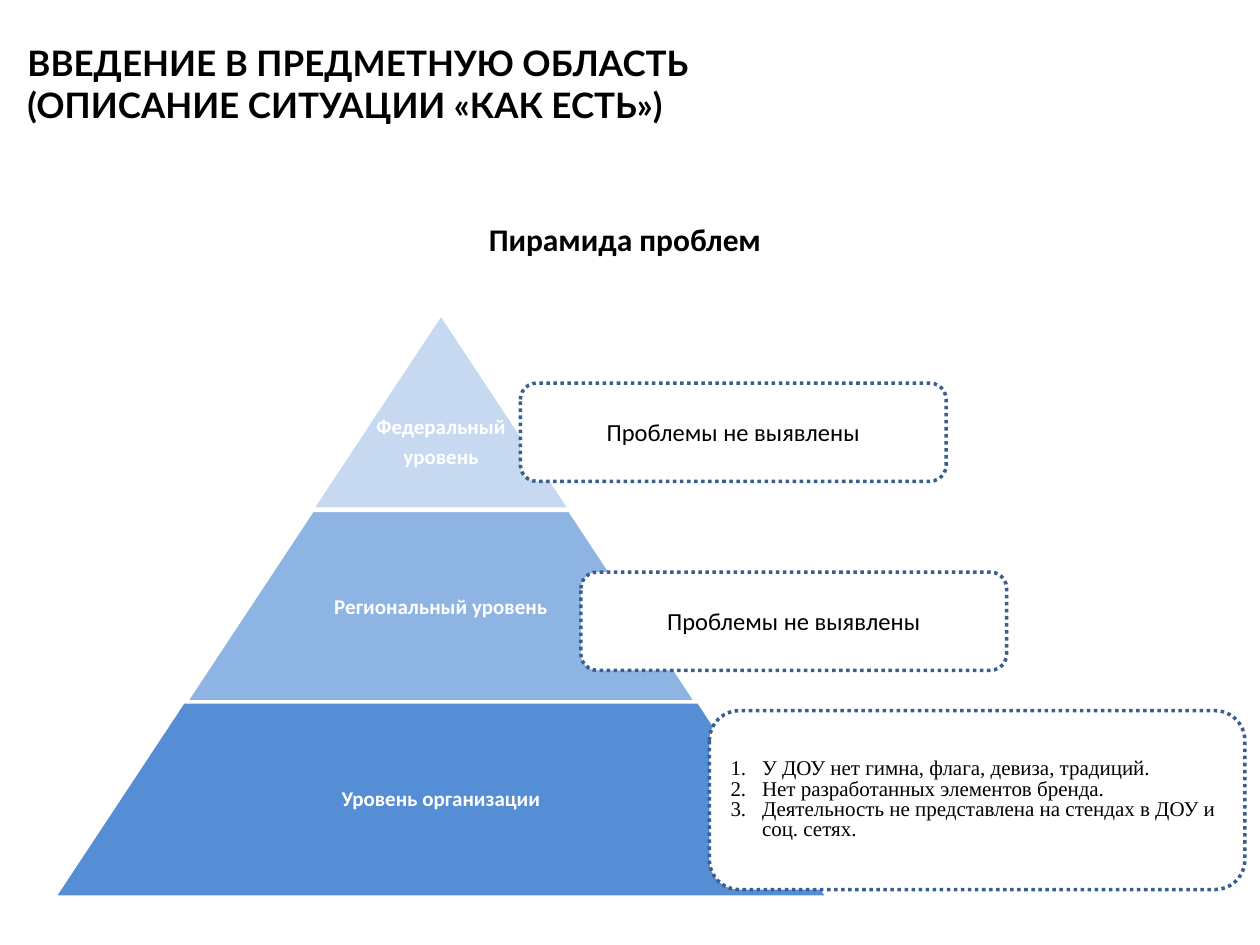
from dataclasses import dataclass

from lxml import etree
from pptx import Presentation
from pptx import util as u
from pptx.dml.color import RGBColor
from pptx.enum import dml, shapes, text
from pptx.oxml.ns import qn

BLACK = RGBColor(0x00, 0x00, 0x00)
WHITE = RGBColor(0xFF, 0xFF, 0xFF)
OUTLINE = RGBColor(0x3A, 0x5F, 0x8C)
PALE_BLUE = RGBColor(0xC6, 0xD9, 0xF1)
LIGHT_BLUE = RGBColor(0x8E, 0xB4, 0xE3)
MID_BLUE = RGBColor(0x55, 0x8E, 0xD5)

TIER_HEIGHT = 1.55
TIER_SLANT = 0.661
PYRAMID_AXIS = 3.5

CENTER = {"alignment": text.PP_ALIGN.CENTER}
TIER_PARAGRAPH = {**CENTER, "line_spacing": 0.9, "space_after": u.Pt(4.2)}
TIER_FONT = {"name": "Calibri", "size": u.Pt(12), "bold": True}
CALLOUT_FONT = {"name": "Calibri", "size": u.Pt(14)}
LIST_FONT = {"name": "Times New Roman", "size": u.Pt(12)}


@dataclass
class Tier:
    lines: list[str]
    top: float
    width: float
    label_width: float
    color: RGBColor
    label_inset: float = 0.02


@dataclass
class Callout:
    lines: list[str]
    left: float
    top: float
    width: float = 3.38
    height: float = 0.78
    numbered: bool = False


TIERS = [
    Tier(["Федеральный", "уровень"], 2.49, 2.05, 2.05, PALE_BLUE, label_inset=0.51),
    Tier(["Региональный уровень"], 4.05, 4.09, 2.66, LIGHT_BLUE),
    Tier(["Уровень организации"], 5.57, 6.14, 3.99, MID_BLUE),
]
CALLOUTS = [
    Callout(
        [
            "У ДОУ нет гимна, флага, девиза, традиций.",
            "Нет разработанных элементов бренда.",
            "Деятельность не представлена на стендах в ДОУ и соц. сетях.",
        ],
        5.63, 5.64, 4.25, 1.42, numbered=True,
    ),
    Callout(["Проблемы не выявлены"], 4.13, 3.04),
    Callout(["Проблемы не выявлены"], 4.61, 4.54),
]


def apply(target, values: dict) -> None:
    for name, value in values.items():
        setattr(target, name, value)


def number(paragraph) -> None:
    """Give the paragraph a hanging indent and an automatic number."""
    properties = paragraph._p.get_or_add_pPr()
    properties.set("marL", str(u.Inches(0.25)))
    properties.set("indent", str(-u.Inches(0.25)))
    etree.SubElement(properties, qn("a:buAutoNum"), type="arabicPeriod")


def write(frame, lines: list[str], paragraph_format: dict, font: dict,
          color: RGBColor = BLACK, numbered: bool = False) -> None:
    frame.word_wrap = True
    for index, line in enumerate(lines):
        paragraph = frame.paragraphs[0] if index == 0 else frame.add_paragraph()
        apply(paragraph, paragraph_format)
        if numbered:
            number(paragraph)
        run = paragraph.add_run()
        run.text = line
        apply(run.font, font)
        run.font.color.rgb = color


def add_text_frame(slide, left: float, top: float, width: float, height: float, **frame_format):
    box = slide.shapes.add_textbox(*map(u.Inches, (left, top, width, height)))
    apply(box.text_frame, frame_format)
    return box.text_frame


def add_outlined(slide, kind, left: float, top: float, width: float, height: float,
                 fill: RGBColor, line: RGBColor):
    shape = slide.shapes.add_shape(kind, *map(u.Inches, (left, top, width, height)))
    shape.shadow.inherit = False
    shape.fill.solid()
    shape.fill.fore_color.rgb = fill
    shape.line.color.rgb = line
    shape.line.width = u.Pt(2)
    return shape


def draw_tier(slide, tier: Tier) -> None:
    trapezoid = add_outlined(
        slide, shapes.MSO_SHAPE.TRAPEZOID, PYRAMID_AXIS - tier.width / 2, tier.top,
        tier.width, TIER_HEIGHT, tier.color, WHITE)
    trapezoid.adjustments[0] = TIER_SLANT
    margin = u.Inches(0.02)
    label = add_text_frame(
        slide, PYRAMID_AXIS - tier.label_width / 2, tier.top, tier.label_width, TIER_HEIGHT,
        vertical_anchor=text.MSO_ANCHOR.MIDDLE, margin_left=margin, margin_right=margin,
        margin_bottom=margin, margin_top=u.Inches(tier.label_inset))
    write(label, tier.lines, TIER_PARAGRAPH, TIER_FONT, WHITE)


def draw_callout(slide, callout: Callout) -> None:
    box = add_outlined(
        slide, shapes.MSO_SHAPE.ROUNDED_RECTANGLE, callout.left, callout.top,
        callout.width, callout.height, WHITE, OUTLINE)
    box.line.dash_style = dml.MSO_LINE.ROUND_DOT
    box.text_frame.vertical_anchor = text.MSO_ANCHOR.MIDDLE
    if callout.numbered:
        list_format = {"alignment": text.PP_ALIGN.LEFT, "line_spacing": 0.8}
        write(box.text_frame, callout.lines, list_format, LIST_FONT, numbered=True)
    else:
        write(box.text_frame, callout.lines, CENTER, CALLOUT_FONT)


def main() -> None:
    deck = Presentation()
    deck.slide_width, deck.slide_height = u.Inches(10), u.Inches(7.5)
    slide = deck.slides.add_slide(deck.slide_layouts[6])

    for tier in TIERS:
        draw_tier(slide, tier)

    title = add_text_frame(
        slide, 0.12, 0.44, 9.5, 0.92, vertical_anchor=text.MSO_ANCHOR.MIDDLE,
        margin_top=0, margin_bottom=u.Inches(0.48))
    write(title, ["ВВЕДЕНИЕ В ПРЕДМЕТНУЮ ОБЛАСТЬ", "(ОПИСАНИЕ СИТУАЦИИ «КАК ЕСТЬ»)"],
          {}, {"name": "Lato", "size": u.Pt(20), "bold": True})
    heading = add_text_frame(slide, 1.22, 1.7, 7.48, 0.4)
    write(heading, ["Пирамида проблем"], CENTER,
          {"name": "Calibri", "size": u.Pt(18), "bold": True})

    for callout in CALLOUTS:
        draw_callout(slide, callout)
    deck.save("out.pptx")


if __name__ == "__main__":
    main()
